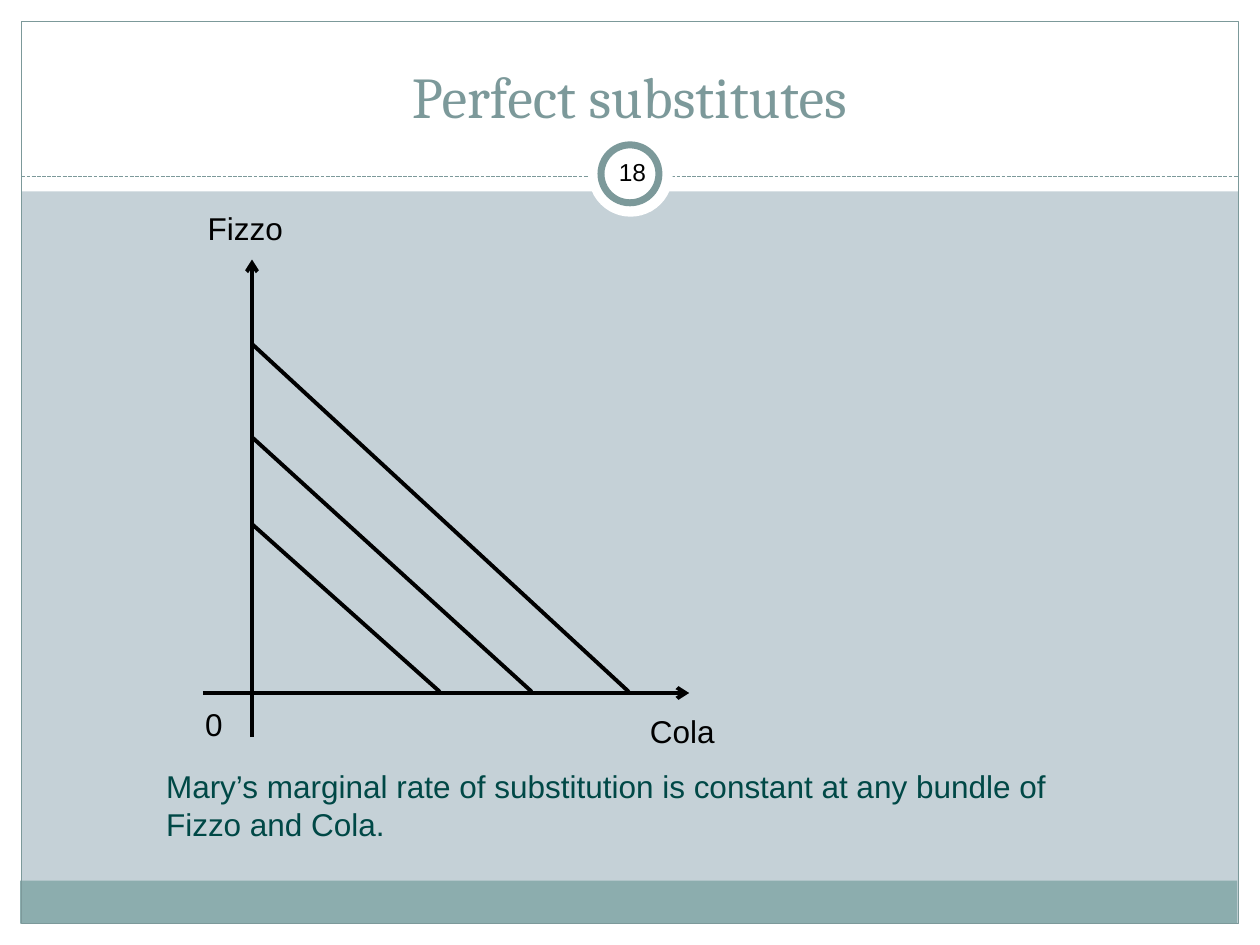
from pptx import Presentation
from pptx.dml.color import RGBColor
from pptx.enum.dml import MSO_LINE
from pptx.enum.shapes import MSO_CONNECTOR, MSO_SHAPE
from pptx.enum.text import MSO_ANCHOR, MSO_AUTO_SIZE, PP_ALIGN
from pptx.oxml.ns import qn
from pptx.util import Inches, Pt
from lxml.etree import SubElement

WHITE, BLACK, TEAL, BAND = "FFFFFF", "000000", "7C999A", "8CADAE"
BACKGROUND, NOTE = "C5D1D7", "004846"


def rgb(value):
    return RGBColor.from_string(value)


class Deck:
    body = {"name": "Arial", "size": Pt(18)}

    def __init__(self, slide):
        self.s = slide

    def background(self, color):
        fill = self.s.background.fill
        fill.solid()
        fill.fore_color.rgb = rgb(color)

    def shape(self, kind, x, y, w, h, fill=None, line=None, width=0.75):
        sp = self.s.shapes.add_shape(kind, Inches(x), Inches(y), Inches(w), Inches(h))
        sp.shadow.inherit = False
        if fill:
            sp.fill.solid()
            sp.fill.fore_color.rgb = rgb(fill)
        else:
            sp.fill.background()
        if line:
            sp.line.color.rgb = rgb(line)
            sp.line.width = Pt(width)
        else:
            sp.line.fill.background()

    def line(self, x1, y1, x2, y2, color=BLACK, width=2.25, dash=None, arrow=False):
        cn = self.s.shapes.add_connector(
            MSO_CONNECTOR.STRAIGHT, Inches(x1), Inches(y1), Inches(x2), Inches(y2))
        cn.line.color.rgb = rgb(color)
        cn.line.width = Pt(width)
        if dash:
            cn.line.dash_style = dash
        if arrow:
            SubElement(cn.line._get_or_add_ln(), qn("a:tailEnd"), type="arrow")
        SubElement(cn._element.spPr, qn("a:effectLst"))

    def text(self, text, x, y, w, h, color=BLACK, align=PP_ALIGN.LEFT, font=None, **frame):
        tf = self.s.shapes.add_textbox(
            Inches(x), Inches(y), Inches(w), Inches(h)).text_frame
        for key, value in ({"word_wrap": True} | frame).items():
            setattr(tf, key, value)
        p = tf.paragraphs[0]
        p.alignment = align
        r = p.add_run()
        r.text = text
        for key, value in (self.body | (font or {})).items():
            setattr(r.font, key, value)
        r.font.color.rgb = rgb(color)


def main():
    prs = Presentation()
    prs.slide_width, prs.slide_height = Inches(10), Inches(7.5)
    d = Deck(prs.slides.add_slide(prs.slide_layouts[6]))

    # Frame: white margins, bottom band, outline and header rule
    d.background(BACKGROUND)
    for box in [(0, 7.33, 10, 0.17), (0, 0, 10, 1.52),
                (0, 0, 0.17, 7.5), (9.83, 0, 0.17, 7.5)]:
        d.shape(MSO_SHAPE.RECTANGLE, *box, fill=WHITE)
    d.shape(MSO_SHAPE.RECTANGLE, 0.16, 6.99, 9.66, 0.34, fill=BAND)
    d.shape(MSO_SHAPE.RECTANGLE, 0.17, 0.17, 9.66, 7.16, line=TEAL)
    d.line(0.17, 1.4, 9.83, 1.4, TEAL, 0.75, dash=MSO_LINE.SQUARE_DOT)

    # Page number badge
    d.shape(MSO_SHAPE.OVAL, 4.67, 1.05, 0.67, 0.67, fill=WHITE)
    d.shape(MSO_SHAPE.OVAL, 4.77, 1.15, 0.46, 0.46, fill=WHITE, line=TEAL, width=4)
    margins = {f"margin_{side}": Inches(0.05) for side in ("left", "top", "right", "bottom")}
    d.text("18", 4.77, 1.12, 0.5, 0.48, align=PP_ALIGN.CENTER, font={"size": Pt(14)},
           vertical_anchor=MSO_ANCHOR.MIDDLE, **margins)

    # Title
    d.text("Perfect substitutes", 0.33, 0.25, 9.33, 0.83, TEAL, PP_ALIGN.CENTER,
           {"name": "Cambria", "size": Pt(33)}, vertical_anchor=MSO_ANCHOR.BOTTOM)

    # Axes and their labels
    x0, y0 = 2, 5.5
    grow = {"auto_size": MSO_AUTO_SIZE.SHAPE_TO_FIT_TEXT}
    d.line(1.61, y0, 5.47, y0, arrow=True)
    d.line(x0, 5.85, x0, 2.06, arrow=True)
    d.text("Cola", 5.06, 5.6, 1.55, 0.4, **grow)
    d.text("0", 1.53, 5.55, 0.41, 0.4, word_wrap=False, **grow)
    d.text("Fizzo", 1.55, 1.61, 0.83, 0.4, word_wrap=False, **grow)

    # Indifference lines, from the vertical to the horizontal axis
    for top, right in [(2.73, 4.99), (4.16, 3.49), (3.47, 4.22)]:
        d.line(x0, top, right, y0 - 0.01)

    # Conclusion
    d.text("Mary’s marginal rate of substitution is constant at any bundle of "
           "Fizzo and Cola.", 1.22, 6.04, 7.3, 0.71, NOTE, **grow)

    prs.save("out.pptx")


if __name__ == "__main__":
    main()
